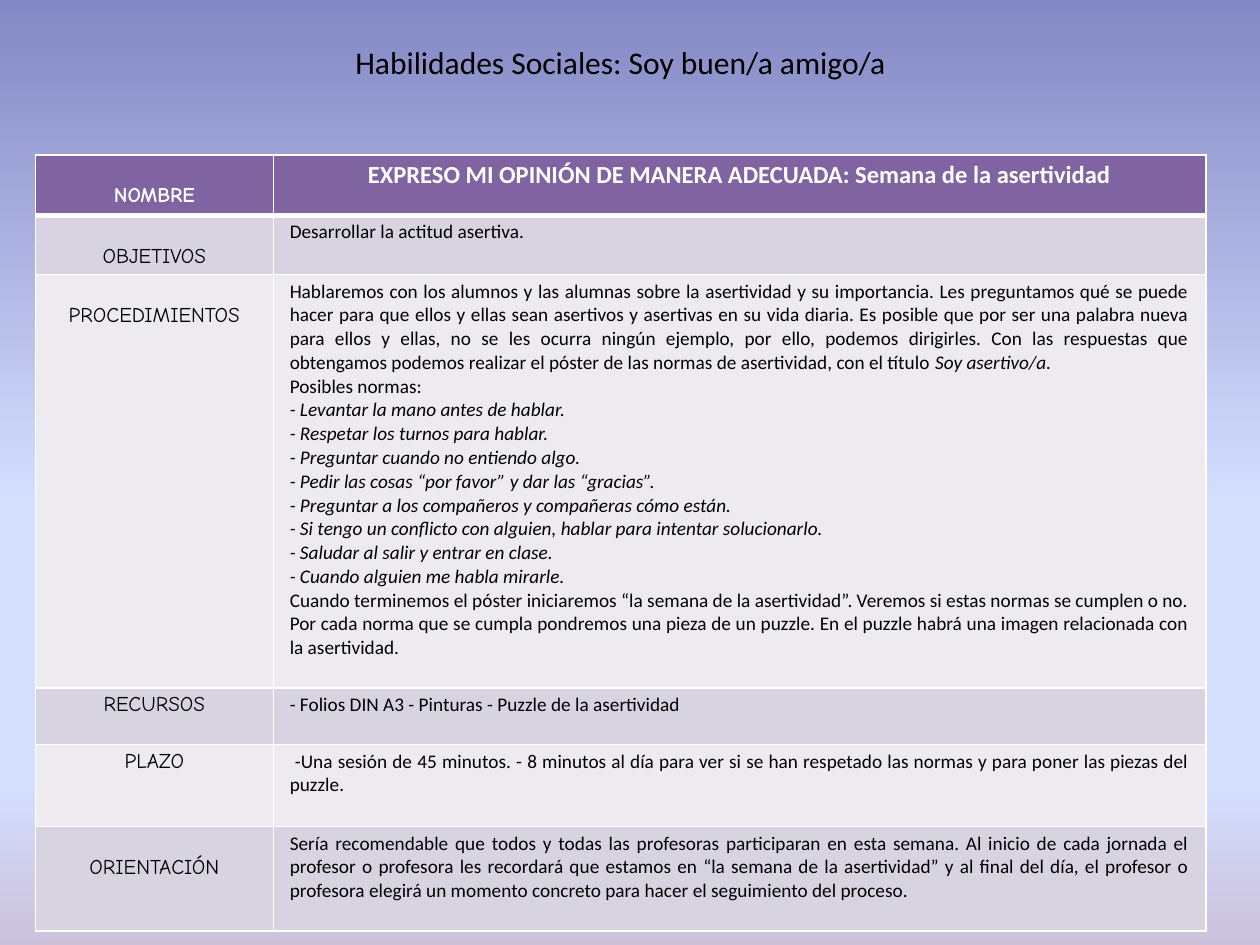
from copy import deepcopy

from lxml import etree
from pptx import Presentation
from pptx import util as u
from pptx.dml.color import RGBColor
from pptx.enum import text
from pptx.oxml.ns import qn


def colour(value):
    return RGBColor.from_string(value)


def add_border(cell, side, points):
    line = etree.SubElement(cell._tc.get_or_add_tcPr(), qn(f"a:ln{side}"), w=str(u.Pt(points)))
    fill = etree.SubElement(line, qn("a:solidFill"))
    etree.SubElement(fill, qn("a:srgbClr"), val="FFFFFF")


HEADER, DARK_BAND, LIGHT_BAND = "8064A2", "D8D3E0", "EDEAF0"
WHITE, BLACK = "FFFFFF", "000000"
LABEL_FONT, BODY_FONT = "Comic Neue", "Calibri"

rules = [
    "Levantar la mano antes de hablar.",
    "Respetar los turnos para hablar.",
    "Preguntar cuando no entiendo algo.",
    "Pedir las cosas “por favor” y dar las “gracias”.",
    "Preguntar a los compañeros y compañeras cómo están.",
    "Si tengo un conflicto con alguien, hablar para intentar solucionarlo.",
    "Saludar al salir y entrar en clase.",
    "Cuando alguien me habla mirarle.",
]
procedure = [
    [("Hablaremos con los alumnos y las alumnas sobre la asertividad y su importancia. "
      "Les preguntamos qué se puede hacer para que ellos y ellas sean asertivos y asertivas "
      "en su vida diaria. Es posible que por ser una palabra nueva para ellos y ellas, no se "
      "les ocurra ningún ejemplo, por ello, podemos dirigirles. Con las respuestas que "
      "obtengamos podemos realizar el póster de las normas de asertividad, con el título ", False),
     ("Soy asertivo/a.", True)],
    [("Posibles normas:", False)],
    *[[(f"- {rule}", True)] for rule in rules],
    [("Cuando terminemos el póster iniciaremos “la semana de la asertividad”. Veremos si "
      "estas normas se cumplen o no. Por cada norma que se cumpla pondremos una pieza de un "
      "puzzle. En el puzzle habrá una imagen relacionada con la asertividad.", False)],
]
rows = [
    ("NOMBRE", 0.48, True,
     [[("EXPRESO MI OPINIÓN DE MANERA ADECUADA: Semana de la asertividad", False)]]),
    ("OBJETIVOS", 0.45, True, [[("Desarrollar la actitud asertiva.", False)]]),
    ("PROCEDIMIENTOS", 3.28, True, procedure),
    ("RECURSOS", 0.45, False,
     [[("- Folios DIN A3 - Pinturas - Puzzle de la asertividad", False)]]),
    ("PLAZO", 0.65, False,
     [[(" -Una sesión de 45 minutos. - 8 minutos al día para ver si se han respetado las "
        "normas y para poner las piezas del puzzle.", False)]]),
    ("ORIENTACIÓN", 0.83, True,
     [[("Sería recomendable que todos y todas las profesoras participaran en esta semana. Al "
        "inicio de cada jornada el profesor o profesora les recordará que estamos en “la semana "
        "de la asertividad” y al final del día, el profesor o profesora elegirá un momento "
        "concreto para hacer el seguimiento del proceso.", False)]]),
]
columns = [1.89, 7.4]

deck = Presentation()
deck.slide_width, deck.slide_height = u.Inches(10), u.Inches(7.5)
page = deck.slides.add_slide(deck.slide_layouts[5])

background = page.background.fill
background.gradient()
background.gradient_angle = 270
stop_list = page.element.find(".//" + qn("a:gsLst"))
for extra in range(2):
    stop_list.append(deepcopy(stop_list[0]))
sky = [(0, "8488C4"), (0.53, "D4DEFF"), (0.83, "D4DEFF"), (1, "CCC1DA")]
for stop, (position, shade) in zip(background.gradient_stops, sky):
    stop.position = position
    stop.color.rgb = colour(shade)

title = page.shapes.title
title.left, title.top, title.width, title.height = map(u.Inches, (2.72, 0.29, 4.8, 0.4))
frame = title.text_frame
frame.text = "Habilidades Sociales: Soy buen/a amigo/a"
frame.word_wrap = True
frame.auto_size = text.MSO_AUTO_SIZE.SHAPE_TO_FIT_TEXT
frame.vertical_anchor = text.MSO_ANCHOR.TOP
frame.paragraphs[0].alignment = text.PP_ALIGN.LEFT
font = frame.paragraphs[0].runs[0].font
font.name, font.size, font.color.rgb = BODY_FONT, u.Pt(18), colour(BLACK)

table = page.shapes.add_table(
    len(rows), len(columns), u.Inches(0.28), u.Inches(1.23),
    u.Inches(sum(columns)), u.Inches(sum(row[1] for row in rows))).table
for column, width in zip(table.columns, columns):
    column.width = u.Inches(width)

for row, (label, height, lowered, body) in enumerate(rows):
    table.rows[row].height = u.Inches(height)
    is_header = row == 0
    band = HEADER if is_header else DARK_BAND if row % 2 else LIGHT_BAND
    for column, content in enumerate([[[(label, False)]], body]):
        is_label = column == 0
        cell = table.cell(row, column)
        for side in "LRTB":
            thick = (is_header and side == "B") or (row == 1 and side == "T")
            add_border(cell, side, 3 if thick else 1)
        cell.fill.solid()
        cell.fill.fore_color.rgb = colour(band)
        cell.margin_left = cell.margin_right = u.Inches(0.13)
        cell.margin_top = u.Inches(0.23 if is_label and lowered else 0.04)
        cell.margin_bottom = u.Inches(0.04)
        centred = is_label or is_header
        for index, spans in enumerate(content):
            para = cell.text_frame.paragraphs[0] if index == 0 else cell.text_frame.add_paragraph()
            para.alignment = text.PP_ALIGN.CENTER if centred else text.PP_ALIGN.JUSTIFY
            for words, italic in spans:
                span = para.add_run()
                span.text = words
                font = span.font
                font.name = LABEL_FONT if is_label else BODY_FONT
                font.size = u.Pt(12 if is_label else 14 if is_header else 11)
                font.bold, font.italic = is_header, italic
                font.color.rgb = colour(WHITE if is_header else BLACK)

deck.save("out.pptx")
